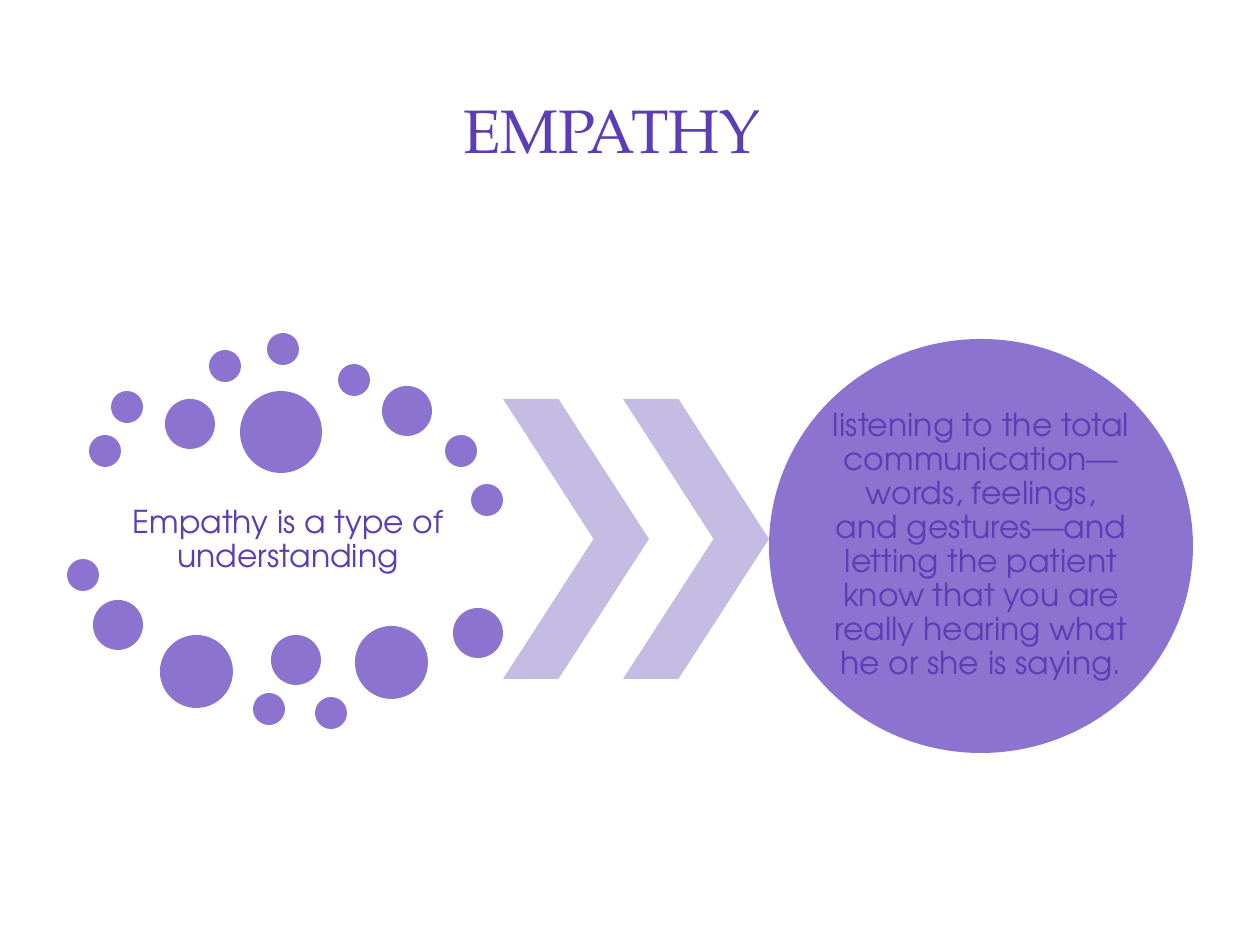
from pptx import Presentation
from pptx.dml.color import RGBColor
from pptx.enum.shapes import MSO_SHAPE
from pptx.enum.text import MSO_ANCHOR, PP_ALIGN
from pptx.util import Emu, Pt

PURPLE = RGBColor(0x5D, 0x3D, 0xB5)
LILAC = RGBColor(0x8C, 0x73, 0xD0)
PALE = RGBColor(0xC5, 0xBC, 0xE4)
SERIF, SANS = "TeX Gyre Pagella", "TeX Gyre Adventor"

TITLE = "EMPATHY"
START = "Empathy is a type of understanding"
RESULT = ("listening to the total communication—words, feelings, and gestures—and "
          "letting the patient know that you are really hearing what he or she is saying.")

DOTS = {
    32: [(89, 435), (111, 391), (209, 350), (267, 333), (338, 364),
         (445, 435), (471, 484), (67, 559), (253, 693), (315, 697)],
    50: [(165, 399), (382, 386), (93, 600), (271, 635), (453, 608)],
    73: [(160, 635), (355, 626)],
    82: [(240, 391)],
}
CHEVRON_LEFTS = [503, 623]


def px(n):
    return Emu(round(n * 914400 / 126))


def add_shape(s, kind, box, color):
    sp = s.shapes.add_shape(kind, *map(px, box))
    sp.shadow.inherit = False
    sp.fill.solid()
    sp.fill.fore_color.rgb = color
    sp.line.fill.background()
    return sp


def add_text(s, text, box, insets, font, spacing=1.0):
    tf = s.shapes.add_textbox(*map(px, box)).text_frame
    left, top, right, bottom = map(px, insets)
    frame = {"word_wrap": True, "vertical_anchor": MSO_ANCHOR.MIDDLE,
             "margin_left": left, "margin_top": top,
             "margin_right": right, "margin_bottom": bottom}
    for key, value in frame.items():
        setattr(tf, key, value)
    p = tf.paragraphs[0]
    p.alignment = PP_ALIGN.CENTER
    p.line_spacing = spacing
    r = p.add_run()
    r.text = text
    for key, value in font.items():
        setattr(r.font, key, value)
    r.font.color.rgb = PURPLE


def main():
    prs = Presentation()
    prs.slide_width, prs.slide_height = px(1260), px(945)
    s = prs.slides.add_slide(prs.slide_layouts[6])
    body = {"name": SANS, "size": Pt(18)}

    add_text(s, TITLE, (59, 57, 1138, 144), (13, 6, 45, 6),
             {"name": SERIF, "size": Pt(35)})
    add_text(s, START, (89, 455, 398, 171), (4, 4, 4, 4), body, 0.9)
    for size, corners in DOTS.items():
        for x, y in corners:
            add_shape(s, MSO_SHAPE.OVAL, (x, y, size, size), LILAC)
    for x in CHEVRON_LEFTS:
        sp = add_shape(s, MSO_SHAPE.CHEVRON, (x, 399, 146, 280), PALE)
        sp.adjustments[0] = 0.62
    add_shape(s, MSO_SHAPE.OVAL, (769, 339, 424, 414), LILAC)
    add_text(s, RESULT, (831, 399, 300, 293), (0, 0, 0, 0), body, 0.9)

    prs.save("out.pptx")


if __name__ == "__main__":
    main()
